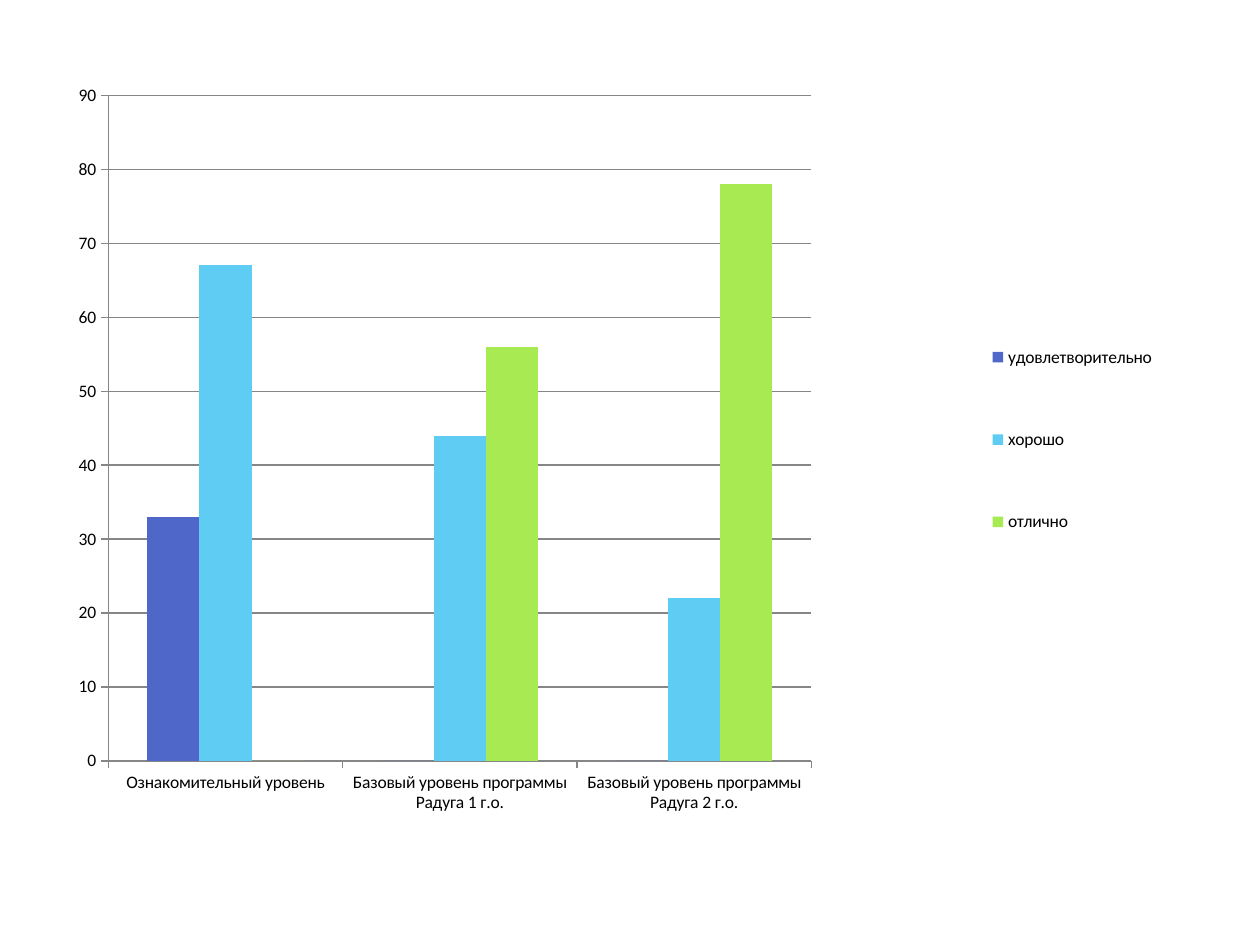
from lxml import etree
from pptx import Presentation
from pptx.chart.data import CategoryChartData
from pptx.dml.color import RGBColor
from pptx.enum import chart as kinds
from pptx.oxml.ns import qn
from pptx.util import Inches, Pt

# Content
LEVELS = [
    "Ознакомительный уровень",
    "Базовый уровень программы Радуга 1 г.о.",
    "Базовый уровень программы Радуга 2 г.о.",
]
GRADES = [
    ("удовлетворительно", (33, 0, 0), RGBColor(0x4E, 0x67, 0xC8)),
    ("хорошо", (67, 44, 22), RGBColor(0x5E, 0xCC, 0xF3)),
    ("отлично", (0, 56, 78), RGBColor(0xA7, 0xEA, 0x52)),
]
BLACK = RGBColor(0, 0, 0)
GRAY = RGBColor(0x86, 0x86, 0x86)

# Parts of the chart frame: left, top, width, height
PLOT_AREA = (0.04, 0.01, 0.62, 0.88)
LEGEND_AREA = (0.79, 0.26, 0.2, 0.41)


def place(part, area, position, inner=False):
    """Give a chart part a manual layout as its child at a position."""
    for old in part.findall(qn("c:layout")):
        part.remove(old)
    layout = etree.Element(qn("c:layout"))
    manual = etree.SubElement(layout, qn("c:manualLayout"))
    settings = [("layoutTarget", "inner")] if inner else []
    settings += [("xMode", "edge"), ("yMode", "edge")]
    settings += zip("xywh", area)
    for name, value in settings:
        etree.SubElement(manual, qn("c:" + name)).set("val", str(value))
    part.insert(position, layout)


deck = Presentation()
deck.slide_width, deck.slide_height = Inches(10), Inches(7.5)
page = deck.slides.add_slide(deck.slide_layouts[6])

# Chart
data = CategoryChartData()
data.categories = LEVELS
for name, values, _ in GRADES:
    data.add_series(name, values)
chart = page.shapes.add_chart(
    kinds.XL_CHART_TYPE.COLUMN_CLUSTERED,
    Inches(0.5), Inches(0.68), Inches(9), Inches(6.02), data).chart
chart.has_title = False
chart.font.name = "Calibri"
chart.font.size = Pt(10)
chart.font.color.rgb = BLACK

# Columns
plot = chart.plots[0]
plot.gap_width = 150
plot.overlap = 0
plot.vary_by_categories = False
for series, (_, _, color) in zip(plot.series, GRADES):
    series.format.fill.solid()
    series.format.fill.fore_color.rgb = color

# Axes
chart.value_axis.minimum_scale = 0
chart.value_axis.maximum_scale = 90
chart.value_axis.major_unit = 10
chart.value_axis.has_major_gridlines = True
for axis in (chart.category_axis, chart.value_axis):
    axis.major_tick_mark = kinds.XL_TICK_MARK.OUTSIDE
    axis.minor_tick_mark = kinds.XL_TICK_MARK.NONE
for lined in (chart.category_axis, chart.value_axis,
              chart.value_axis.major_gridlines):
    lined.format.line.color.rgb = GRAY
    lined.format.line.width = Pt(0.75)

# Legend and layout
chart.has_legend = True
chart.legend.position = kinds.XL_LEGEND_POSITION.RIGHT
chart.legend.include_in_layout = False
space = chart.element
place(space.find(".//" + qn("c:plotArea")), PLOT_AREA, 0, inner=True)
place(space.find(".//" + qn("c:legend")), LEGEND_AREA, 1)

deck.save("out.pptx")
